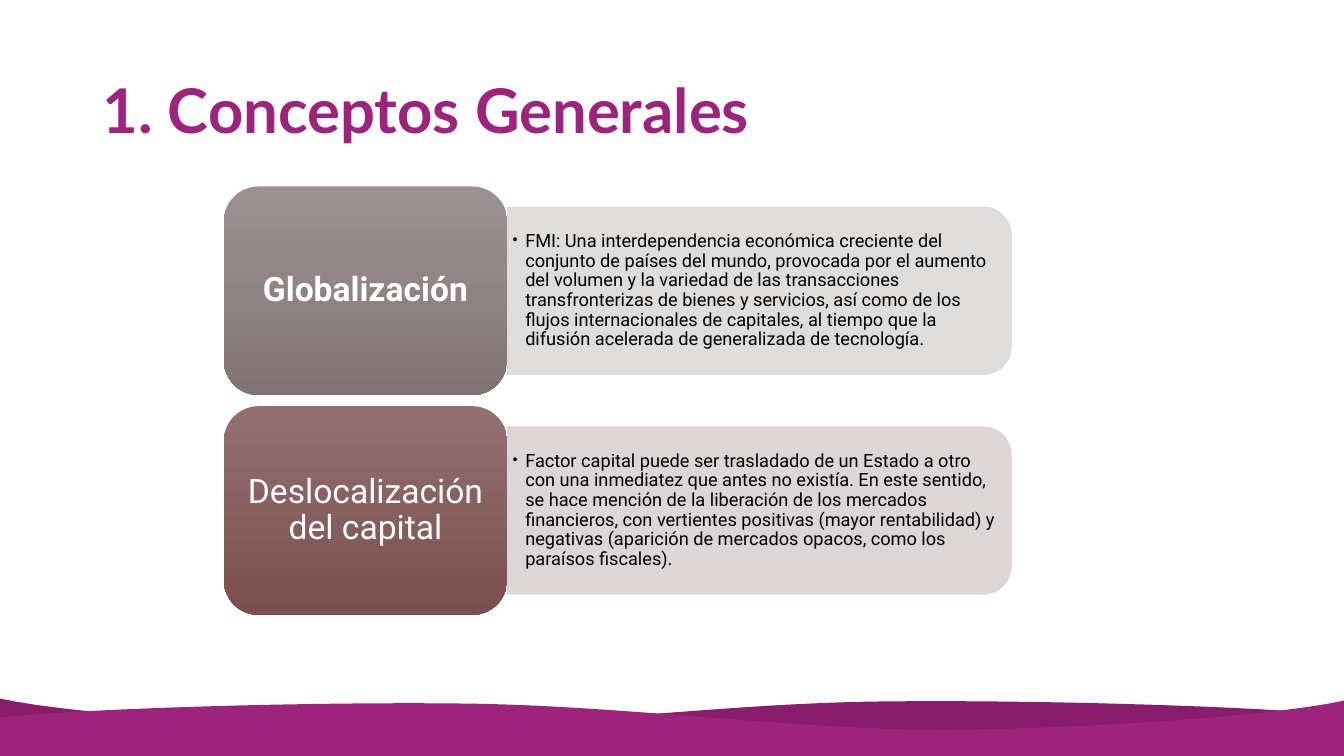
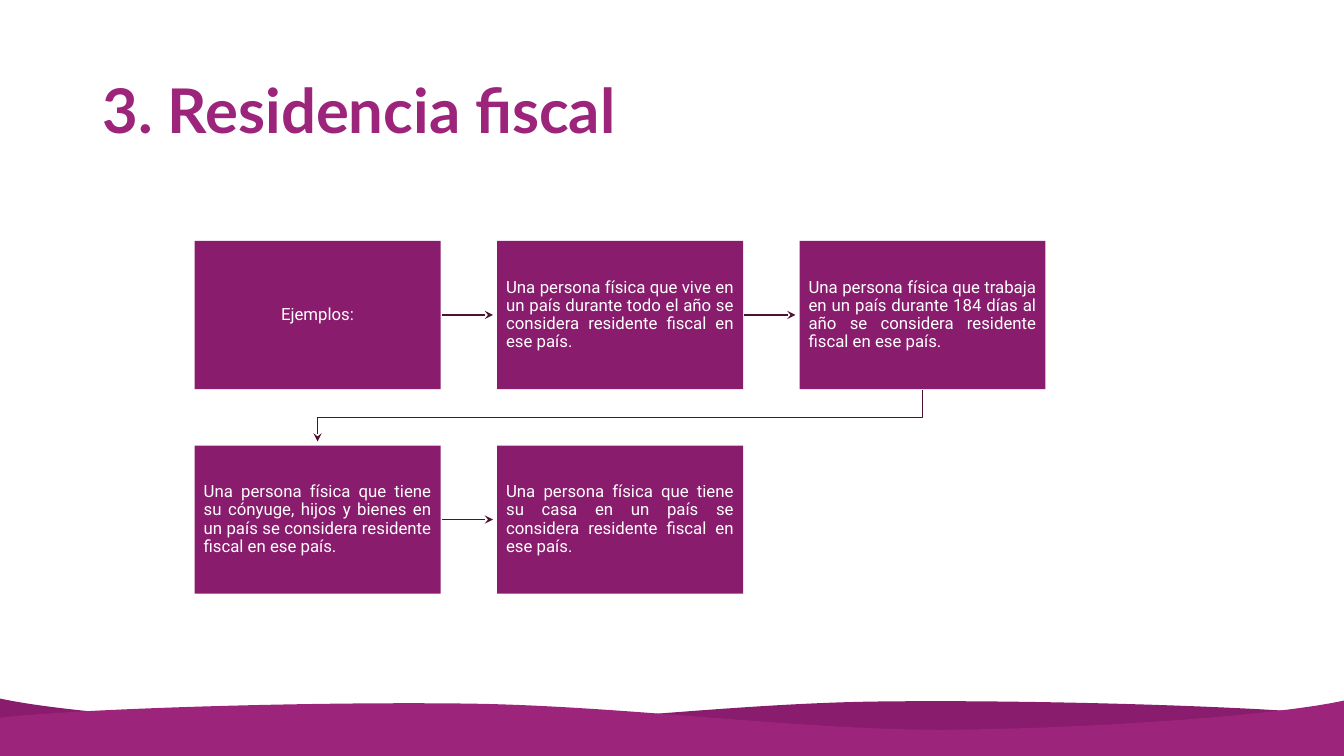
"""Build two slides on globalisation concepts and tax residence."""
from dataclasses import dataclass
from itertools import pairwise

from lxml import etree
from pptx import Presentation
from pptx.dml.color import RGBColor
from pptx.enum import shapes, text
from pptx.oxml.ns import qn
from pptx.util import Inches, Pt

WIDTH, HEIGHT = 13.33, 7.5
PURPLE = RGBColor(0x9C, 0x24, 0x7B)
DARK_PURPLE = RGBColor(0x89, 0x1C, 0x6C)
ARROW_COLOR = RGBColor(0x4D, 0x11, 0x32)
WHITE = RGBColor(0xFF, 0xFF, 0xFF)
BLACK = RGBColor(0x00, 0x00, 0x00)
GREY_TOP = RGBColor(0x9D, 0x92, 0x93)
GREY_BOTTOM = RGBColor(0x82, 0x74, 0x75)
GREY_PANEL = RGBColor(0xDC, 0xD9, 0xD9)
RED_TOP = RGBColor(0x93, 0x71, 0x71)
RED_BOTTOM = RGBColor(0x7A, 0x4F, 0x4F)
RED_PANEL = RGBColor(0xD9, 0xD2, 0xD2)
TITLE_FONT, BODY_FONT = "Lato", "Roboto"

WAVE_EDGE = (
    (13.33, 7.1),
    (12.56, 7.01), (10.26, 6.94), (8.7, 6.96),
    (7.15, 6.98), (5.43, 7.22), (3.98, 7.22),
    (2.53, 7.21), (0.68, 7.08), (0, 6.93),
)
FRONT_WAVE_DROP = 0.02

CONCEPT_LEFT, CONCEPT_TOP, CONCEPT_PITCH = 2.22, 1.85, 2.18
CONCEPT_WIDTH, CONCEPT_HEIGHT = 2.81, 2.07
PANEL_WIDTH, PANEL_HEIGHT = 5.0, 1.66
PANEL_TEXT_WIDTH, PANEL_TEXT_HEIGHT = 4.91, 1.5
BULLET_INDENT = 0.13

COLUMNS = 3
STEP_LEFT, STEP_TOP = 1.93, 2.39
STEP_WIDTH, STEP_HEIGHT = 2.44, 1.47
STEP_PITCH_X, STEP_PITCH_Y = 3.0, 2.03
ARROW_START, ARROW_GAP = 0.01, 0.04

Point = tuple[float, float]


@dataclass(frozen=True)
class Concept:
    """A named concept with its definition and colours."""

    name: str
    definition: str
    top_color: RGBColor
    bottom_color: RGBColor
    panel_color: RGBColor
    bold: bool = False


@dataclass(frozen=True)
class Step:
    """A box of the residence flow."""

    wording: str
    align: text.PP_ALIGN = text.PP_ALIGN.JUSTIFY


CONCEPTS = (
    Concept(
        "Globalización",
        "FMI: Una interdependencia económica creciente del conjunto de países del mundo, "
        "provocada por el aumento del volumen y la variedad de las transacciones "
        "transfronterizas de bienes y servicios, así como de los flujos internacionales "
        "de capitales, al tiempo que la difusión acelerada de generalizada de tecnología.",
        GREY_TOP, GREY_BOTTOM, GREY_PANEL, bold=True,
    ),
    Concept(
        "Deslocalización del capital",
        "Factor capital puede ser trasladado de un Estado a otro con una inmediatez que "
        "antes no existía. En este sentido, se hace mención de la liberación de los "
        "mercados financieros, con vertientes positivas (mayor rentabilidad) y negativas "
        "(aparición de mercados opacos, como los paraísos fiscales).",
        RED_TOP, RED_BOTTOM, RED_PANEL,
    ),
)

STEPS = (
    Step("Ejemplos:", text.PP_ALIGN.CENTER),
    Step("Una persona física que vive en un país durante todo el año se considera "
         "residente fiscal en ese país."),
    Step("Una persona física que trabaja en un país durante 184 días al año se considera "
         "residente fiscal en ese país."),
    Step("Una persona física que tiene su cónyuge, hijos y bienes en un país se considera "
         "residente fiscal en ese país."),
    Step("Una persona física que tiene su casa en un país se considera residente fiscal "
         "en ese país."),
)


def write(shape, wording: str, *, size: float, color: RGBColor, font: str = BODY_FONT,
          bold: bool = False, align: text.PP_ALIGN = text.PP_ALIGN.LEFT,
          margins: Point = (0.1, 0.05), bullet: bool = False) -> None:
    """Write one formatted paragraph, vertically centred, into a shape."""
    frame = shape.text_frame
    frame.word_wrap = True
    frame.vertical_anchor = text.MSO_ANCHOR.MIDDLE
    frame.margin_left = frame.margin_right = Inches(margins[0])
    frame.margin_top = frame.margin_bottom = Inches(margins[1])
    paragraph = frame.paragraphs[0]
    paragraph.alignment = align
    paragraph.line_spacing = 0.9
    run = paragraph.add_run()
    run.text = wording
    run.font.name, run.font.size, run.font.bold = font, Pt(size), bold
    run.font.color.rgb = color
    if bullet:
        properties = shape.element.find(".//" + qn("a:pPr"))
        properties.set("marL", str(Inches(BULLET_INDENT)))
        properties.set("indent", str(Inches(-BULLET_INDENT)))
        etree.SubElement(properties, qn("a:buFont")).set("typeface", font)
        etree.SubElement(properties, qn("a:buChar")).set("char", "•")


def add_box(slide, kind: shapes.MSO_SHAPE, left: float, top: float,
            width: float, height: float, color: RGBColor):
    """Add a solid preset shape without line or shadow."""
    shape = slide.shapes.add_shape(
        kind, Inches(left), Inches(top), Inches(width), Inches(height))
    shape.shadow.inherit = False
    shape.fill.solid()
    shape.fill.fore_color.rgb = color
    shape.line.fill.background()
    return shape


def add_textbox(slide, left: float, top: float, width: float, height: float):
    """Add a text box measured in inches."""
    return slide.shapes.add_textbox(
        Inches(left), Inches(top), Inches(width), Inches(height))


def add_outline(slide, points: list[Point], close: bool):
    """Add a freeform through the given points."""
    corners = [(Inches(x), Inches(y)) for x, y in points]
    builder = slide.shapes.build_freeform(*corners[0])
    builder.add_line_segments(corners[1:], close=close)
    shape = builder.convert_to_shape()
    shape.shadow.inherit = False
    return shape


def curve_edge(shape, curve_count: int) -> None:
    """Turn each leading triple of line segments into one cubic curve."""
    segments = list(shape.element.iter(qn("a:lnTo")))
    for index in range(curve_count):
        triple = segments[3 * index:3 * index + 3]
        curve = etree.Element(qn("a:cubicBezTo"))
        triple[0].addprevious(curve)
        for segment in triple:
            curve.append(segment[0])
            segment.getparent().remove(segment)


def add_waves(slide) -> None:
    """Draw the footer wave and its mirrored front wave."""
    front = [(WIDTH - x, y + FRONT_WAVE_DROP) for x, y in WAVE_EDGE]
    for edge, color in ((list(WAVE_EDGE), DARK_PURPLE), (front, PURPLE)):
        corners = [(edge[-1][0], HEIGHT), (edge[0][0], HEIGHT)]
        wave = add_outline(slide, edge + corners, close=True)
        curve_edge(wave, len(edge) // 3)
        wave.fill.solid()
        wave.fill.fore_color.rgb = color
        wave.line.fill.background()


def add_titled_slide(presentation, title: str):
    """Add a blank slide with the shared waves and title."""
    slide = presentation.slides.add_slide(presentation.slide_layouts[6])
    add_waves(slide)
    write(add_textbox(slide, 0.92, 0.4, 11.5, 1.45), title,
          size=44, color=PURPLE, font=TITLE_FONT, bold=True)
    return slide


def add_concept(slide, concept: Concept, top: float) -> None:
    """Draw a concept block with its definition panel."""
    middle = top + CONCEPT_HEIGHT / 2
    panel_left = CONCEPT_LEFT + CONCEPT_WIDTH
    panel = add_box(slide, shapes.MSO_SHAPE.ROUND_2_SAME_RECTANGLE,
                    panel_left + (PANEL_WIDTH - PANEL_HEIGHT) / 2,
                    middle - PANEL_WIDTH / 2, PANEL_HEIGHT, PANEL_WIDTH,
                    concept.panel_color)
    panel.rotation = 90
    panel.line.color.rgb = concept.panel_color
    panel.line.width = Pt(0.5)
    for color in panel.element.spPr.iter(qn("a:srgbClr")):
        etree.SubElement(color, qn("a:alpha")).set("val", "90000")
    definition = add_textbox(slide, panel_left, middle - PANEL_TEXT_HEIGHT / 2,
                             PANEL_TEXT_WIDTH, PANEL_TEXT_HEIGHT)
    write(definition, concept.definition, size=13, color=BLACK,
          margins=(0.05, 0.03), bullet=True)
    block = add_box(slide, shapes.MSO_SHAPE.ROUNDED_RECTANGLE, CONCEPT_LEFT, top,
                    CONCEPT_WIDTH, CONCEPT_HEIGHT, concept.top_color)
    block.fill.gradient()
    block.fill.gradient_angle = 270
    for stop, stop_color in zip(block.fill.gradient_stops,
                                (concept.top_color, concept.bottom_color)):
        stop.color.rgb = stop_color
    write(block, concept.name, size=24, color=WHITE, bold=concept.bold,
          align=text.PP_ALIGN.CENTER)


def add_arrow(slide, points: list[Point]) -> None:
    """Draw a straight or bent arrow through the points."""
    if len(points) == 2:
        (x1, y1), (x2, y2) = points
        arrow = slide.shapes.add_connector(
            shapes.MSO_CONNECTOR.STRAIGHT, Inches(x1), Inches(y1), Inches(x2), Inches(y2))
        etree.SubElement(arrow.element.spPr, qn("a:effectLst"))
    else:
        arrow = add_outline(slide, points, close=False)
        arrow.fill.background()
    arrow.line.color.rgb = ARROW_COLOR
    arrow.line.width = Pt(1)
    line = arrow.element.spPr.find(qn("a:ln"))
    etree.SubElement(line, qn("a:tailEnd")).set("type", "stealth")


def step_corner(index: int) -> Point:
    """Return the top left corner of a step in the grid."""
    row, column = divmod(index, COLUMNS)
    return STEP_LEFT + column * STEP_PITCH_X, STEP_TOP + row * STEP_PITCH_Y


def arrow_route(start: Point, end: Point) -> list[Point]:
    """Route an arrow between the boxes at two corners."""
    if start[1] == end[1]:
        middle = start[1] + STEP_HEIGHT / 2
        return [(start[0] + STEP_WIDTH + ARROW_START, middle), (end[0] - ARROW_GAP, middle)]
    start_x, end_x = start[0] + STEP_WIDTH / 2, end[0] + STEP_WIDTH / 2
    bottom = start[1] + STEP_HEIGHT
    turn = (bottom + end[1]) / 2
    return [(start_x, bottom + ARROW_START), (start_x, turn),
            (end_x, turn), (end_x, end[1] - ARROW_GAP)]


def build_concepts(presentation) -> None:
    """Build the slide of general concepts."""
    slide = add_titled_slide(presentation, "1. Conceptos Generales")
    for index, concept in enumerate(CONCEPTS):
        add_concept(slide, concept, CONCEPT_TOP + index * CONCEPT_PITCH)


def build_residence(presentation) -> None:
    """Build the slide of tax residence examples."""
    slide = add_titled_slide(presentation, "3. Residencia fiscal")
    corners = [step_corner(index) for index in range(len(STEPS))]
    for start, end in pairwise(corners):
        add_arrow(slide, arrow_route(start, end))
    for step, (left, top) in zip(STEPS, corners):
        box = add_box(slide, shapes.MSO_SHAPE.RECTANGLE, left, top,
                      STEP_WIDTH, STEP_HEIGHT, DARK_PURPLE)
        write(box, step.wording, size=12, color=WHITE, align=step.align,
              margins=(0.09, 0.1))


def main() -> None:
    """Build and save the presentation."""
    presentation = Presentation()
    presentation.slide_width, presentation.slide_height = Inches(WIDTH), Inches(HEIGHT)
    build_concepts(presentation)
    build_residence(presentation)
    presentation.save("out.pptx")


if __name__ == "__main__":
    main()
